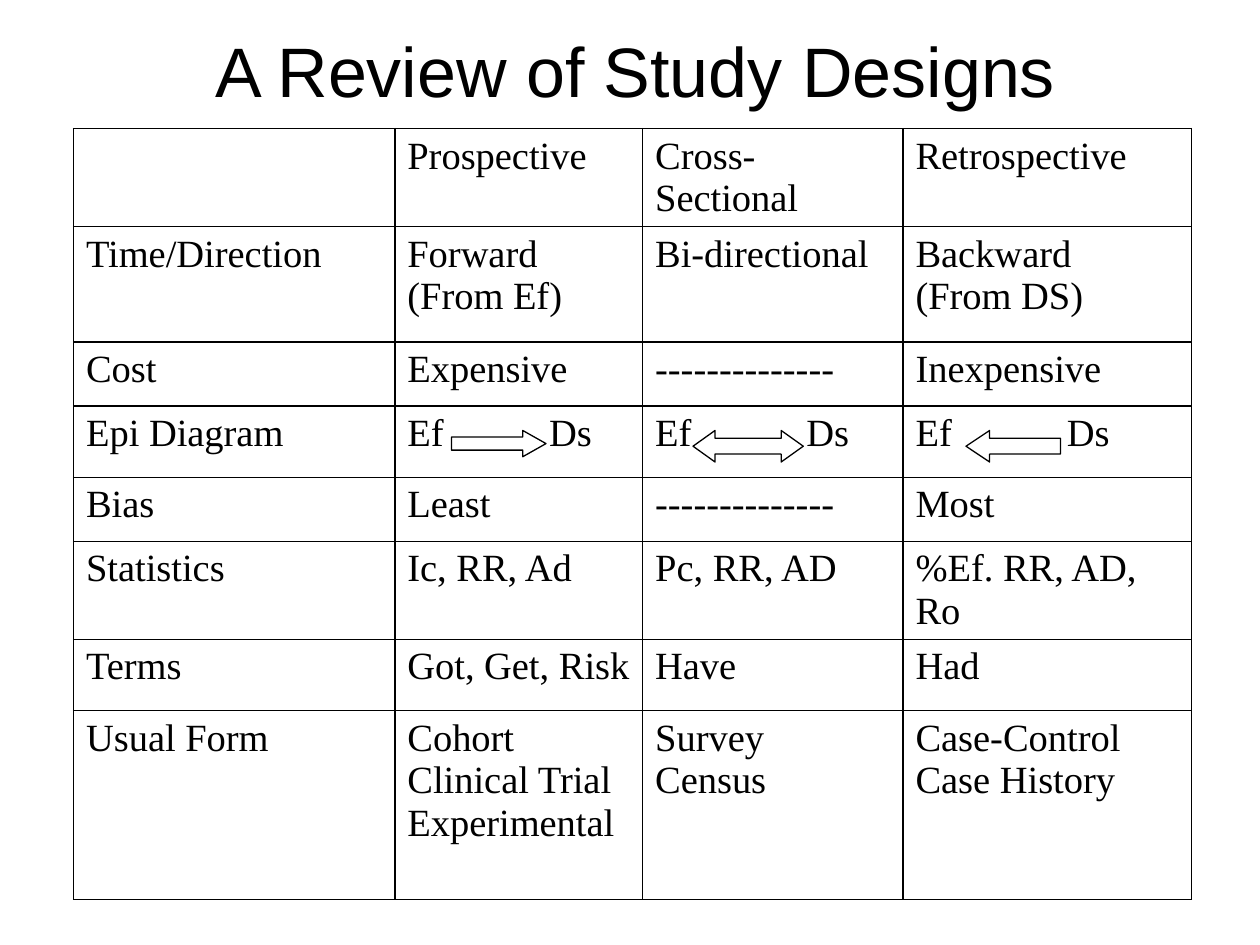
import pptx
import pptx.util
import pptx.dml.color
import pptx.enum.shapes
import pptx.enum.text
import pptx.oxml.ns
import lxml.etree

BLACK = pptx.dml.color.RGBColor(0x00, 0x00, 0x00)
WHITE = pptx.dml.color.RGBColor(0xFF, 0xFF, 0xFF)

GRID_COLUMNS, GRID_ROWS = 120, 90
TITLE_FONT = {"name": "Arial", "size": pptx.util.Pt(40)}
TABLE_FONT = {"name": "Times New Roman", "size": pptx.util.Pt(22)}

COLUMN_WIDTHS = [30.6, 23.6, 24.8, 27.5]
ROW_HEIGHTS = [6.8, 11, 6.1, 6.8, 6.1, 6.8, 6.8, 18]
TAB_STOPS = [None, 13.5, 14.4, 14.4]
DASHES = "-" * 14

DESIGNS = [
    ["", "Prospective", "Cross-Sectional", "Retrospective"],
    ["Time/Direction", "Forward\n(From Ef)", "Bi-directional", "Backward\v(From DS)"],
    ["Cost", "Expensive", DASHES, "Inexpensive"],
    ["Epi Diagram", "Ef\tDs", "Ef\tDs", "Ef\tDs"],
    ["Bias", "Least", DASHES, "Most"],
    ["Statistics", "Ic, RR, Ad", "Pc, RR, AD", "%Ef. RR, AD, Ro"],
    ["Terms", "Got, Get, Risk", "Have", "Had"],
    ["Usual Form", "Cohort\vClinical Trial\vExperimental", "Survey\vCensus",
     "Case-Control\nCase History"],
]

SHAPES = pptx.enum.shapes.MSO_SHAPE
# Preset, left, width, height, head length relative to height
ARROWS = [
    (SHAPES.RIGHT_ARROW, 43, 9, 2.5, 0.885),
    (SHAPES.LEFT_RIGHT_ARROW, 66, 10.5, 3, 0.7),
    (SHAPES.LEFT_ARROW, 92, 9, 3, 0.75),
]


def add_xml(parent, tag, **attributes):
    return lxml.etree.SubElement(parent, pptx.oxml.ns.qn(tag), attributes)


class SlideBuilder:
    """Places styled elements on a slide, measured in grid columns and rows."""

    def __init__(self, prs):
        self.slide = prs.slides.add_slide(prs.slide_layouts[6])
        self.column = prs.slide_width / GRID_COLUMNS
        self.row = prs.slide_height / GRID_ROWS

    def box(self, left, top, width, height):
        return (round(left * self.column), round(top * self.row),
                round(width * self.column), round(height * self.row))

    def set_font(self, p, values):
        for r in p.runs:
            for key, value in values.items():
                setattr(r.font, key, value)
            r.font.color.rgb = BLACK

    def title(self, text, *place):
        tf = self.slide.shapes.add_textbox(*self.box(*place)).text_frame
        tf.word_wrap = True
        tf.text = text
        p = tf.paragraphs[0]
        p.alignment = pptx.enum.text.PP_ALIGN.CENTER
        self.set_font(p, TITLE_FONT)

    def arrow(self, preset, head, *place):
        sp = self.slide.shapes.add_shape(preset, *self.box(*place))
        sp.shadow.inherit = False
        sp.adjustments[0] = 0.5
        sp.adjustments[1] = head
        sp.fill.solid()
        sp.fill.fore_color.rgb = WHITE
        sp.line.color.rgb = BLACK
        sp.line.width = pptx.util.Pt(0.75)

    def table(self, rows, left, top):
        place = self.box(left, top, sum(COLUMN_WIDTHS), sum(ROW_HEIGHTS))
        table = self.slide.shapes.add_table(
            len(rows), len(COLUMN_WIDTHS), *place).table
        for flag in ("first_row", "horz_banding"):
            setattr(table, flag, False)
        for column, width in zip(table.columns, COLUMN_WIDTHS):
            column.width = round(width * self.column)
        for row, height in zip(table.rows, ROW_HEIGHTS):
            row.height = round(height * self.row)
        for row, texts in zip(table.rows, rows):
            for cell, text, tab in zip(row.cells, texts, TAB_STOPS):
                self.fill_cell(cell, text, tab)

    def fill_cell(self, cell, text, tab):
        cell.text = text
        for p in cell.text_frame.paragraphs:
            self.set_font(p, TABLE_FONT)
            if "\t" in text:
                tabs = add_xml(p._p.get_or_add_pPr(), "a:tabLst")
                add_xml(tabs, "a:tab", pos=str(round(tab * self.column)), algn="l")
        properties = cell._tc.get_or_add_tcPr()
        for side in ("a:lnL", "a:lnR", "a:lnT", "a:lnB"):
            line = add_xml(properties, side, w=str(pptx.util.Pt(1)))
            add_xml(add_xml(line, "a:solidFill"), "a:srgbClr", val=str(BLACK))
        cell.fill.background()


def main():
    prs = pptx.Presentation()
    prs.slide_width = pptx.util.Inches(10)
    prs.slide_height = pptx.util.Inches(7.5)
    builder = SlideBuilder(prs)
    for preset, left, width, height, head in ARROWS:
        builder.arrow(preset, head, left, 41, width, height)
    builder.table(DESIGNS, 7, 12.25)
    builder.title("A Review of Study Designs", 9, 2, 103, 9.25)
    prs.save("out.pptx")


if __name__ == "__main__":
    main()
